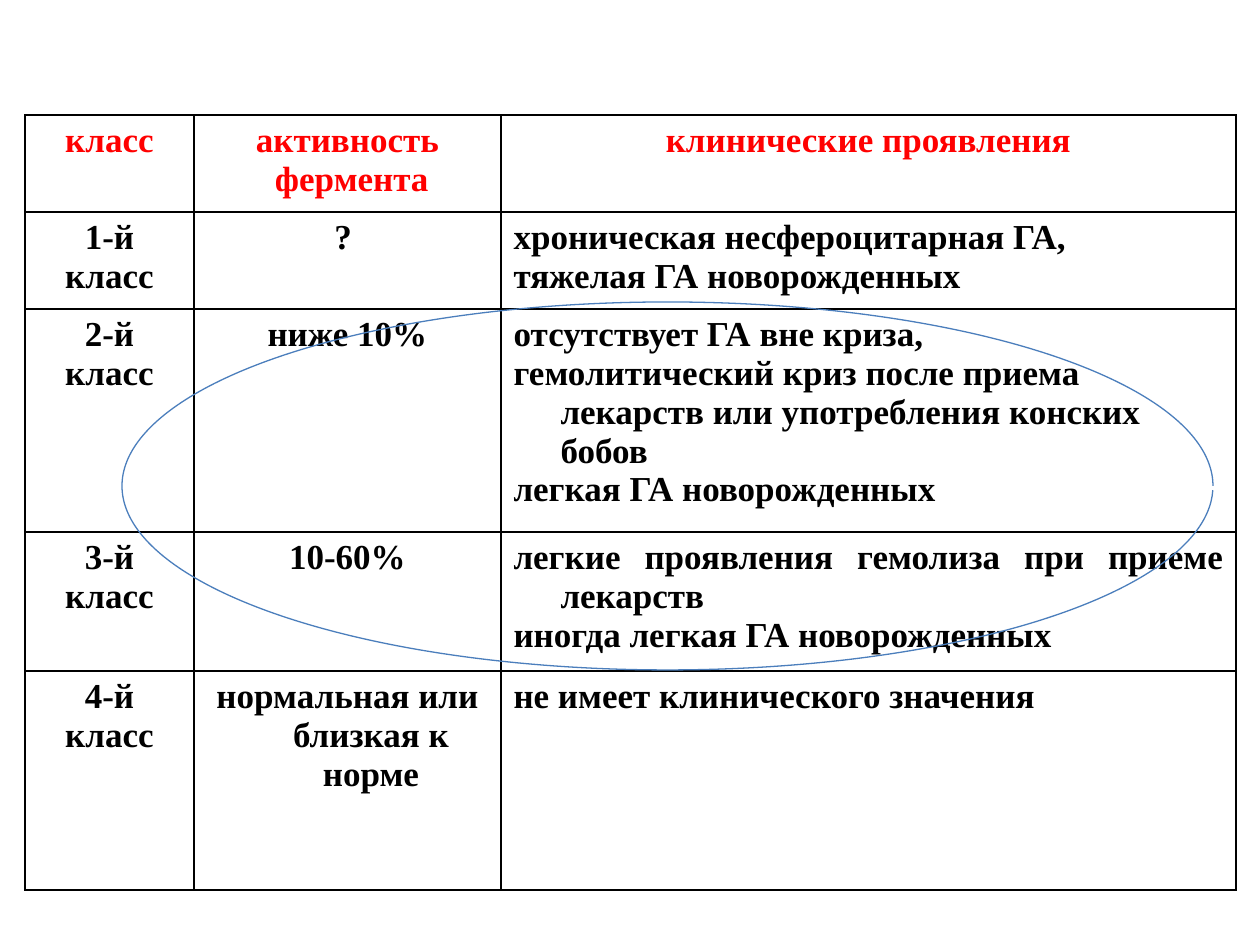
"""Build a slide with a table of enzyme deficiency classes and an arc around the middle ones."""
from lxml import etree
from pptx import Presentation
from pptx import util as u
from pptx.dml.color import RGBColor
from pptx.enum import shapes, text
from pptx.oxml.ns import qn

PX = 914400 // 126
RED = RGBColor(0xFF, 0, 0)
BLACK = RGBColor(0, 0, 0)
BLUE = RGBColor(0x4B, 0x7E, 0xBC)
FONT = "Times New Roman"
CENTER, LEFT, JUSTIFY = text.PP_ALIGN.CENTER, text.PP_ALIGN.LEFT, text.PP_ALIGN.JUSTIFY

HEADER = (["класс"], ["активность", " фермента"], ["клинические проявления"])
CLASSES = [
    ("1-й", "? ", JUSTIFY, ["хроническая несфероцитарная ГА, ", "тяжелая ГА новорожденных"]),
    ("2-й", "ниже 10%", LEFT, [
        "отсутствует ГА вне криза,",
        "гемолитический криз после приема лекарств или употребления конских бобов",
        "легкая ГА новорожденных"]),
    ("3-й", "10-60%", JUSTIFY, [
        "легкие проявления гемолиза при приеме лекарств",
        "иногда легкая ГА новорожденных"]),
    ("4-й", "нормальная или близкая к норме", LEFT, ["не имеет клинического значения"]),
]
TABLE_LEFT, TABLE_TOP = 25, 115
COLUMNS = (169, 307, 735)
ROWS = (97, 97, 223, 139, 219)
ARC = (122, 302, 1091, 368)
HANGING = 47


def px(value):
    return u.Emu(value * PX)


def add_borders(cell):
    properties = cell._tc.get_or_add_tcPr()
    for position, side in enumerate(("a:lnL", "a:lnR", "a:lnT", "a:lnB")):
        line = etree.Element(qn(side), w=str(u.Pt(1)))
        fill = etree.SubElement(line, qn("a:solidFill"))
        etree.SubElement(fill, qn("a:srgbClr"), val=str(BLACK))
        properties.insert(position, line)


def fill_cell(cell, lines, color, align):
    cell.fill.background()
    add_borders(cell)
    cell.text = "\n".join(lines)
    for paragraph in cell.text_frame.paragraphs:
        paragraph.alignment = align
        font = paragraph.font
        font.name, font.size, font.bold = FONT, u.Pt(20), True
        font.color.rgb = color
        indents = paragraph._p.get_or_add_pPr()
        indents.set("marL", str(px(HANGING)))
        indents.set("indent", str(px(-HANGING)))


def add_class_table(slide):
    table = slide.shapes.add_table(
        len(ROWS), len(COLUMNS), px(TABLE_LEFT), px(TABLE_TOP),
        px(sum(COLUMNS)), px(sum(ROWS))).table
    table.first_row = table.horz_banding = False
    for column, width in zip(table.columns, COLUMNS):
        column.width = px(width)
    for row, height in zip(table.rows, ROWS):
        row.height = px(height)
    for cell, lines in zip(table.rows[0].cells, HEADER):
        fill_cell(cell, lines, RED, CENTER)
    for r, (number, activity, align, signs) in enumerate(CLASSES, 1):
        fill_cell(table.cell(r, 0), [number, "класс"], BLACK, CENTER)
        fill_cell(table.cell(r, 1), [activity], BLACK, CENTER)
        fill_cell(table.cell(r, 2), signs, BLACK, align)


def add_arc(slide):
    arc = slide.shapes.add_shape(shapes.MSO_SHAPE.ARC, *map(px, ARC))
    arc.adjustments[0], arc.adjustments[1] = 0.27, 0
    arc.shadow.inherit = False
    arc.fill.background()
    arc.line.color.rgb = BLUE
    arc.line.width = u.Pt(0.75)


def main():
    deck = Presentation()
    deck.slide_width, deck.slide_height = px(1260), px(945)
    slide = deck.slides.add_slide(deck.slide_layouts[6])
    add_class_table(slide)
    add_arc(slide)
    deck.save("out.pptx")


if __name__ == "__main__":
    main()
